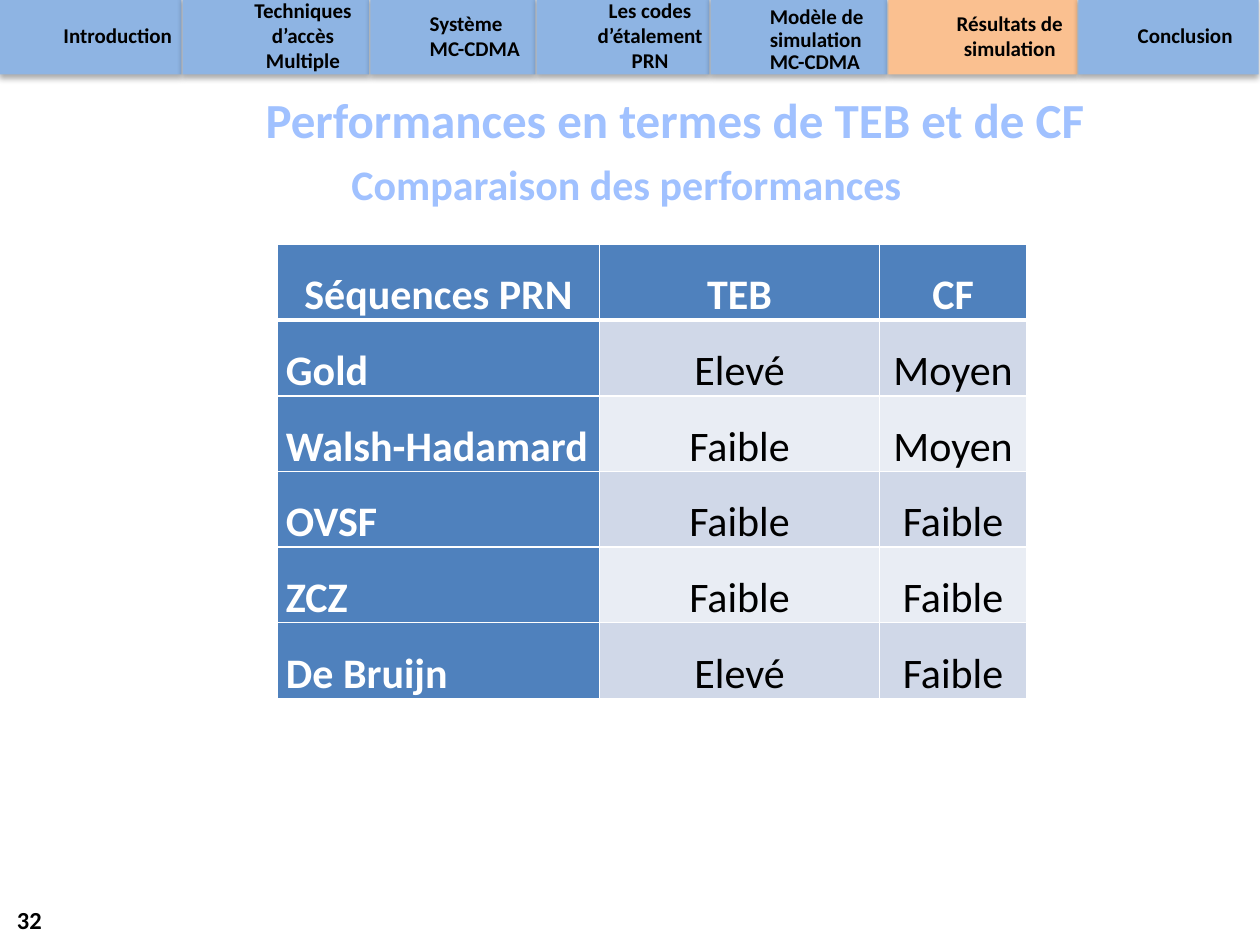
from lxml import etree
from pptx import Presentation
from pptx.dml.color import RGBColor
from pptx.enum.shapes import MSO_SHAPE
from pptx.enum.text import MSO_ANCHOR, PP_ALIGN
from pptx.oxml import parse_xml
from pptx.oxml.ns import nsdecls, qn
from pptx.util import Inches, Pt

RECTANGLE = MSO_SHAPE.RECTANGLE
MIDDLE = MSO_ANCHOR.MIDDLE
LEFT, CENTER, RIGHT, JUSTIFY = (
    PP_ALIGN.LEFT, PP_ALIGN.CENTER, PP_ALIGN.RIGHT, PP_ALIGN.JUSTIFY)

FONT = "Calibri"
BLACK, WHITE = "000000", "FFFFFF"
TAB, ACTIVE_TAB = "8EB4E3", "FAC090"
HEADING, TABLE_HEAD = "A0C1FF", "4F81BD"
BANDS = ["D0D8E8", "E9EDF4"]

# Section, left edge, alignment, line spacing, top inset
SECTIONS = [
    ("Introduction", 0, CENTER, 1, 0.04),
    ("Techniques d’accès Multiple", 1.45, CENTER, 1, 0.04),
    ("Système MC-CDMA", 2.94, LEFT, 1, 0.04),
    ("Les codes d’étalement PRN", 4.26, CENTER, 1, 0.04),
    ("Modèle de simulation MC-CDMA", 5.64, LEFT, 0.9, 0.12),
    ("Résultats de simulation", 7.05, CENTER, 1, 0.04),
    ("Conclusion", 8.56, LEFT, 1, 0.04),
]
ACTIVE_SECTION = "Résultats de simulation"
TAB_TOP, TAB_HEIGHT, TAB_GAP = -0.03, 0.62, 0.01

# Text, box, size, alignment, colour, wrapping
TEXTS = [
    ("Performances en termes de TEB et de CF",
     (1.93, 0.66, 6.85, 0.57), 28, CENTER, HEADING, True),
    ("Comparaison des performances",
     (2.69, 1.21, 4.61, 0.5), 24, LEFT, HEADING, False),
    ("32", (0, 7.1, 0.43, 0.4), 14, RIGHT, BLACK, True),
]

PERFORMANCES = [
    ("Séquences PRN", "TEB", "CF"),
    ("Gold", "Elevé", "Moyen"),
    ("Walsh-Hadamard", "Faible", "Moyen"),
    ("OVSF", "Faible", "Faible"),
    ("ZCZ", "Faible", "Faible"),
    ("De Bruijn", "Elevé", "Faible"),
]
COLUMN_WIDTHS = [2.56, 2.22, 1.17]
ROW_HEIGHT = 0.6
TABLE_LEFT, TABLE_TOP = 2.2, 1.94


def rgb(color):
    return RGBColor.from_string(color)


def inches(*lengths):
    return [Inches(length) for length in lengths]


def write(frame, text, size, color, align, bold=True):
    frame.text = text
    paragraph = frame.paragraphs[0]
    paragraph.alignment = align
    font = paragraph.font
    font.name, font.size, font.bold = FONT, Pt(size), bold
    font.color.rgb = rgb(color)
    return paragraph


def add_soft_shadow(shape):
    shape.shadow.inherit = False
    effects = shape._element.spPr.find(qn("a:effectLst"))
    effects.append(parse_xml(
        f'<a:outerShdw {nsdecls("a")} blurRad="{Pt(3.5)}" dist="{Pt(2.2)}" '
        'dir="5400000" rotWithShape="0"><a:srgbClr val="000000">'
        '<a:alpha val="32000"/></a:srgbClr></a:outerShdw>'))


def add_tab(slide, section, right):
    text, left, align, spacing, top_inset = section
    tab = slide.shapes.add_shape(
        RECTANGLE, *inches(left, TAB_TOP, right - left, TAB_HEIGHT))
    tab.fill.solid()
    tab.fill.fore_color.rgb = rgb(ACTIVE_TAB if text == ACTIVE_SECTION else TAB)
    tab.line.fill.background()
    add_soft_shadow(tab)
    frame = tab.text_frame
    frame.word_wrap = True
    frame.vertical_anchor = MIDDLE
    frame.margin_left, frame.margin_top, frame.margin_right, frame.margin_bottom = (
        inches(0.47, top_inset, 0.04, 0.04))
    write(frame, text, 12, BLACK, align).line_spacing = spacing


def add_text(slide, text, box, size, align, color, wrap):
    frame = slide.shapes.add_textbox(*inches(*box)).text_frame
    frame.word_wrap = wrap
    if text.isdigit():
        frame.vertical_anchor = MIDDLE
    write(frame, text, size, color, align)


def set_borders(cell, widths):
    """Draw white borders; widths maps a side (L, R, T, B) to points."""
    properties = cell._tc.get_or_add_tcPr()
    for position, (side, width) in enumerate(widths.items()):
        line = etree.Element(qn(f"a:ln{side}"), w=str(Pt(width)))
        fill = etree.SubElement(line, qn("a:solidFill"))
        etree.SubElement(fill, qn("a:srgbClr"), val=WHITE)
        properties.insert(position, line)


def add_performance_table(slide):
    row_count, column_count = len(PERFORMANCES), len(COLUMN_WIDTHS)
    table = slide.shapes.add_table(
        row_count, column_count,
        *inches(TABLE_LEFT, TABLE_TOP, sum(COLUMN_WIDTHS),
                ROW_HEIGHT * row_count)).table
    for column, width in zip(table.columns, COLUMN_WIDTHS):
        column.width = Inches(width)
    for r, values in enumerate(PERFORMANCES):
        table.rows[r].height = Inches(ROW_HEIGHT)
        for c, value in enumerate(values):
            heading = r == 0 or c == 0
            cell = table.cell(r, c)
            cell.margin_left = cell.margin_right = Inches(0.07)
            cell.margin_top = cell.margin_bottom = 0
            cell.fill.solid()
            cell.fill.fore_color.rgb = rgb(
                TABLE_HEAD if heading else BANDS[(r - 1) % 2])
            paragraph = write(cell.text_frame, value, 24,
                              WHITE if heading else BLACK,
                              JUSTIFY if r and c == 0 else CENTER, heading)
            paragraph.line_spacing = 1.5
            paragraph.space_before = Pt(6)
            set_borders(cell, {"L": 1, "R": 1, "T": 3 if r == 1 else 1,
                               "B": 3 if r == 0 else 1})


def main():
    deck = Presentation()
    deck.slide_width, deck.slide_height = inches(10, 7.5)
    slide = deck.slides.add_slide(deck.slide_layouts[6])
    next_edges = [section[1] for section in SECTIONS[1:]] + [10]
    for section, edge in zip(SECTIONS, next_edges):
        add_tab(slide, section, edge - TAB_GAP)
    for entry in TEXTS:
        add_text(slide, *entry)
    add_performance_table(slide)
    deck.save("out.pptx")


if __name__ == "__main__":
    main()
